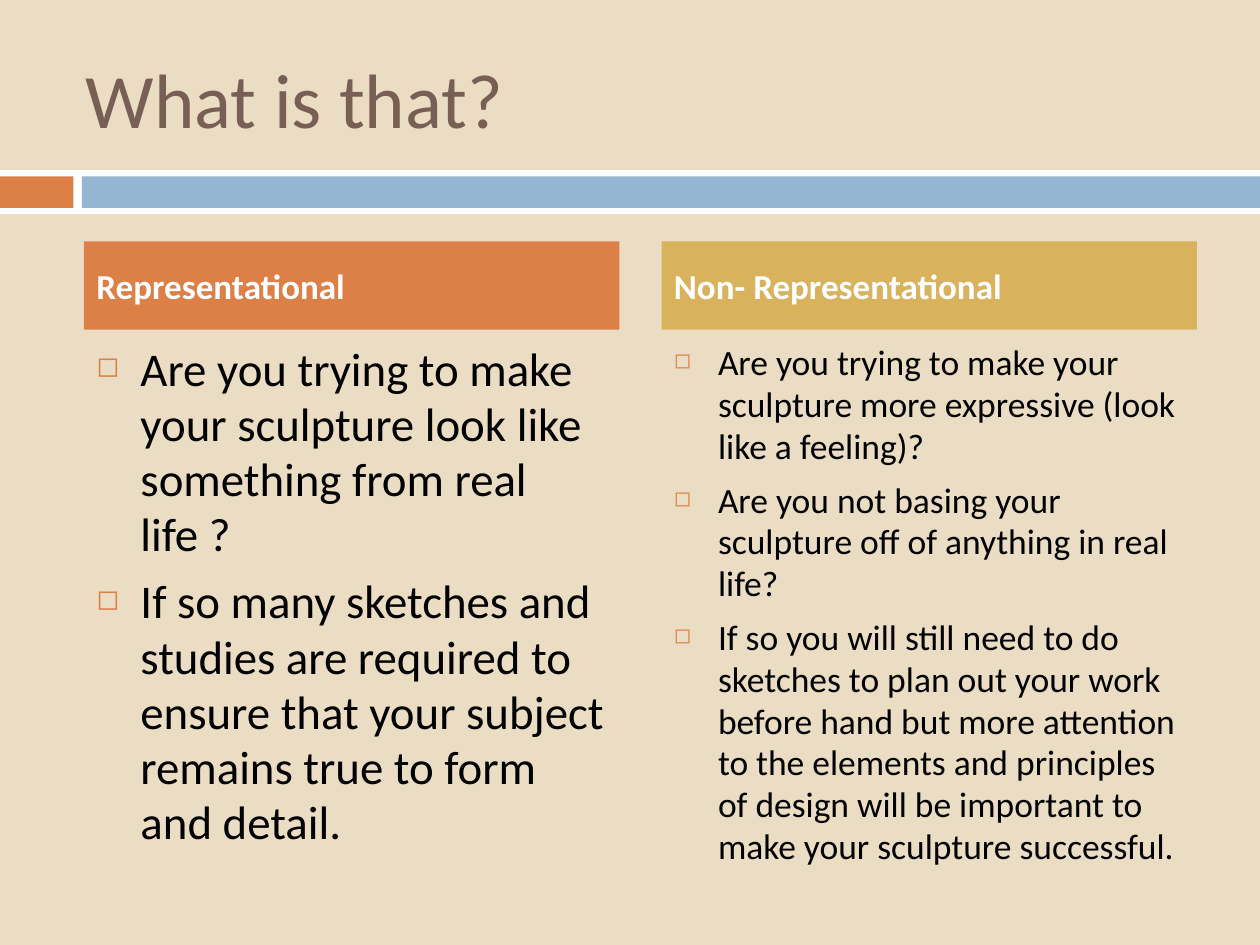
from dataclasses import dataclass

from lxml import etree
from pptx import Presentation
from pptx.dml.color import RGBColor
from pptx.enum.shapes import MSO_SHAPE
from pptx.enum.text import MSO_ANCHOR, PP_ALIGN
from pptx.oxml.ns import qn
from pptx.util import Pt

RECTANGLE = MSO_SHAPE.RECTANGLE
MIDDLE, TOP = MSO_ANCHOR.MIDDLE, MSO_ANCHOR.TOP
LEFT = PP_ALIGN.LEFT


@dataclass(frozen=True)
class Theme:
    font: str = "Calibri"
    sand: str = "EBDDC3"
    brown: str = "775F55"
    orange: str = "DD8047"
    blue: str = "94B6D2"
    gold: str = "D8B25C"
    white: str = "FFFFFF"
    black: str = "000000"
    title_size: float = 44
    heading_size: float = 20


THEME = Theme()
TITLE = "What is that?"
COLUMNS = [
    {
        "heading": "Representational",
        "fill": THEME.orange,
        "size": 26.8,
        "points": [
            "Are you trying to make your sculpture look like something from real life ?",
            "If so many sketches and studies are required to ensure that your subject "
            "remains true to form and detail.",
        ],
    },
    {
        "heading": "Non- Representational",
        "fill": THEME.gold,
        "size": 20.3,
        "points": [
            "Are you trying to make your sculpture more expressive (look like a feeling)?",
            "Are you not basing your sculpture off of anything in real life?",
            "If so you will still need to do sketches to plan out your work before hand "
            "but more attention to the elements and principles of design will be "
            "important to make your sculpture successful.",
        ],
    },
]

PAGE_WIDTH, PAGE_HEIGHT = 720, 540
BAND_TOP, BAND_HEIGHT, BAND_INSET = 97.2, 25.2, 3.6
TAB_WIDTH, TAB_GAP = 42, 4.8
COLUMN_LEFT, COLUMN_WIDTH, COLUMN_GAP = 48, 306, 24
HEADING_TOP, HEADING_HEIGHT = 138, 50.4
BODY_TOP, BODY_HEIGHT = 192, 282
BULLET, BULLET_PERCENT, BULLET_INDENT = "◻", 60, 25.2
POINT_GAP, LINE_SPACING = 7, 0.98


def add_rectangle(page, left, top, width, height, color):
    shape = page.shapes.add_shape(RECTANGLE, Pt(left), Pt(top), Pt(width), Pt(height))
    shape.shadow.inherit = False
    shape.fill.solid()
    shape.fill.fore_color.rgb = RGBColor.from_string(color)
    shape.line.fill.background()
    return shape


def add_bullet(para):
    properties = para._p.get_or_add_pPr()
    properties.set("marL", str(Pt(BULLET_INDENT)))
    properties.set("indent", str(-Pt(BULLET_INDENT)))
    color = etree.SubElement(properties, qn("a:buClr"))
    etree.SubElement(color, qn("a:srgbClr"), val=THEME.orange)
    etree.SubElement(properties, qn("a:buSzPct"), val=str(BULLET_PERCENT * 1000))
    etree.SubElement(properties, qn("a:buChar"), char=BULLET)


def write(box, texts, size, color, anchor=MIDDLE, bold=False, bulleted=False):
    frame = box.text_frame
    frame.word_wrap = True
    frame.vertical_anchor = anchor
    for index, text in enumerate(texts):
        para = frame.add_paragraph() if index else frame.paragraphs[0]
        para.alignment = LEFT
        if bulleted:
            add_bullet(para)
            para.line_spacing = LINE_SPACING
        if index:
            para.space_before = Pt(POINT_GAP)
        span = para.add_run()
        span.text = text
        span.font.name = THEME.font
        span.font.size = Pt(size)
        span.font.bold = bold
        span.font.color.rgb = RGBColor.from_string(color)


def add_text(page, left, top, width, height, *content, **style):
    box = page.shapes.add_textbox(Pt(left), Pt(top), Pt(width), Pt(height))
    write(box, *content, **style)


def add_band(page):
    add_rectangle(page, 0, BAND_TOP, PAGE_WIDTH, BAND_HEIGHT, THEME.white)
    top, height = BAND_TOP + BAND_INSET, BAND_HEIGHT - 2 * BAND_INSET
    bar_left = TAB_WIDTH + TAB_GAP
    add_rectangle(page, 0, top, TAB_WIDTH, height, THEME.orange)
    add_rectangle(page, bar_left, top, PAGE_WIDTH - bar_left, height, THEME.blue)


def add_column(page, index, column):
    left = COLUMN_LEFT + index * (COLUMN_WIDTH + COLUMN_GAP)
    add_text(page, left, BODY_TOP, COLUMN_WIDTH, BODY_HEIGHT, column["points"],
             column["size"], THEME.black, anchor=TOP, bulleted=True)
    heading = add_rectangle(page, left, HEADING_TOP, COLUMN_WIDTH, HEADING_HEIGHT,
                            column["fill"])
    write(heading, [column["heading"]], THEME.heading_size, THEME.white, bold=True)


def main():
    deck = Presentation()
    deck.slide_width, deck.slide_height = Pt(PAGE_WIDTH), Pt(PAGE_HEIGHT)
    page = deck.slides.add_slide(deck.slide_layouts[6])
    page.background.fill.solid()
    page.background.fill.fore_color.rgb = RGBColor.from_string(THEME.sand)
    add_band(page)
    add_text(page, TAB_WIDTH, 21.6, 642, 68.4, [TITLE], THEME.title_size, THEME.brown)
    for index, column in enumerate(COLUMNS):
        add_column(page, index, column)
    deck.save("out.pptx")


if __name__ == "__main__":
    main()
